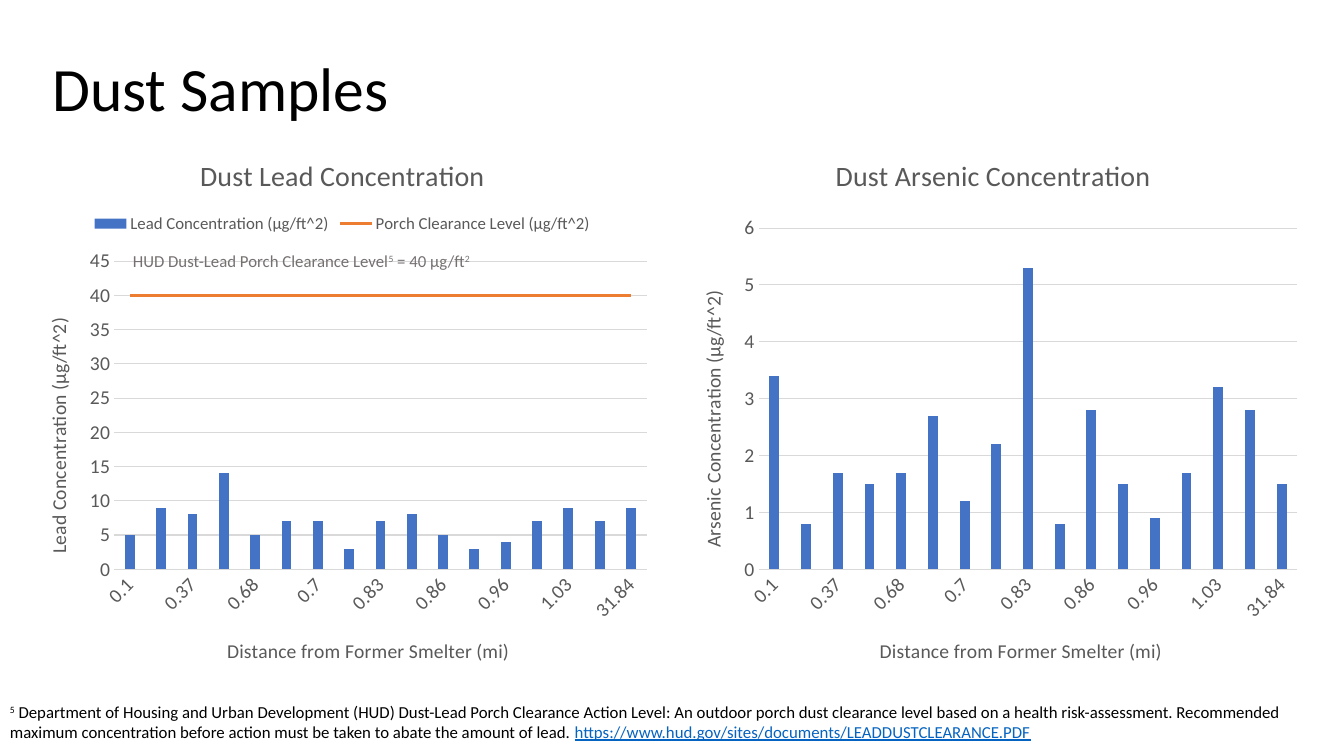
from lxml import etree
from pptx import Presentation
from pptx.chart.data import CategoryChartData
from pptx.dml.color import RGBColor
from pptx.enum.chart import XL_CHART_TYPE as ChartType, XL_LEGEND_POSITION as LegendPosition
from pptx.enum.chart import XL_MARKER_STYLE as MarkerStyle, XL_TICK_MARK as TickMark
from pptx.enum.text import MSO_ANCHOR as Anchor
from pptx.oxml import parse_xml
from pptx.oxml.ns import nsdecls, qn
from pptx.util import Cm, Pt

# Content
TITLE = "Dust Samples"
DISTANCES = ["0.1", "0.31", "0.37", "0.59", "0.68", "0.69", "0.7", "0.79", "0.83",
             "0.84", "0.86", "0.9", "0.96", "1.03", "1.03", "1.06", "31.84"]
DISTANCE_TITLE = "Distance from Former Smelter (mi)"
CHARTS = [
    dict(title="Dust Lead Concentration", value_title="Lead Concentration (µg/ft^2)",
         bars=("Lead Concentration (µg/ft^2)",
               [5, 9, 8, 14, 5, 7, 7, 3, 7, 8, 5, 3, 4, 7, 9, 7, 9]),
         limit=("Porch Clearance Level (µg/ft^2)", 40),
         top=45, step=5, plot=(0.14, 0.23, 0.84, 0.56)),
    dict(title="Dust Arsenic Concentration", value_title="Arsenic Concentration (µg/ft^2)",
         bars=("Series 1", [3.4, 0.8, 1.7, 1.5, 1.7, 2.7, 1.2, 2.2, 5.3,
                            0.8, 2.8, 1.5, 0.9, 1.7, 3.2, 2.8, 1.5]),
         limit=None, top=6, step=1, plot=(0.13, 0.17, 0.85, 0.62)),
]
CLEARANCE_NOTE = [("HUD Dust-Lead Porch Clearance Level", {}), ("5", dict(raised=True)),
                  (" = 40 µg/ft", {}), ("2", dict(raised=True))]
FOOTNOTE = [
    ("5", dict(raised=True)),
    (" Department of Housing and Urban Development (HUD) Dust-Lead Porch Clearance Action "
     "Level: An outdoor porch dust clearance level based on a health risk-assessment. "
     "Recommended maximum concentration before action must be taken to abate the amount "
     "of lead. ", {}),
    ("https://www.hud.gov/sites/documents/LEADDUSTCLEARANCE.PDF",
     dict(color="link", underline=True)),
]

THEME = dict(
    font="Calibri",
    color={name: RGBColor.from_string(code) for name, code in dict(
        text="000000", note="767171", chart="595959", grid="D9D9D9",
        bars="4472C4", limit="ED7D31", link="0563C1").items()},
    size=dict(title=Pt(44), chart=Pt(20), axis=Pt(14), small=Pt(12)),
)

# Layout
CHART_LEFT, CHART_TOP = 0.64, 3.39
CHART_WIDTH, CHART_HEIGHT, CHART_PITCH = 15.98, 13.87, 16.4


def style_font(font, size, color):
    font.name, font.size, font.bold = THEME["font"], THEME["size"][size], False
    font.color.rgb = THEME["color"][color]


def add_span(para, text, size="small", color="text", raised=False, underline=False):
    span = para.add_run()
    span.text = text
    style_font(span.font, size, color)
    if underline:
        span.font.underline = True
    if raised:
        span.font._element.set("baseline", "30000")


def add_text(page, area, spans, anchor=Anchor.TOP, line_spacing=None, **base):
    box = page.shapes.add_textbox(*map(Cm, area))
    frame = box.text_frame
    frame.word_wrap, frame.vertical_anchor = True, anchor
    para = frame.paragraphs[0]
    para.line_spacing = line_spacing
    for text, extra in spans:
        add_span(para, text, **{**base, **extra})


def set_title(owner, text, size):
    owner.has_title = True
    title = owner.chart_title if hasattr(owner, "chart_title") else owner.axis_title
    add_span(title.text_frame.paragraphs[0], text, size=size, color="chart")


def set_line(line, color, width):
    line.color.rgb, line.width = THEME["color"][color], Pt(width)


def place_plot(chart, fractions):
    area = chart.element.find(".//" + qn("c:plotArea"))
    for old in area.findall(qn("c:layout")):
        area.remove(old)
    parts = "".join(f'<c:{name} val="{value}"/>' for name, value in zip("xywh", fractions))
    area.insert(0, parse_xml(
        f'<c:layout {nsdecls("c")}><c:manualLayout><c:layoutTarget val="inner"/>'
        f'<c:xMode val="edge"/><c:yMode val="edge"/>{parts}</c:manualLayout></c:layout>'))


def turn_last_series_into_line(chart):
    bars = chart.element.find(".//" + qn("c:barChart"))
    series = bars.findall(qn("c:ser"))[-1]
    for flag in series.findall(qn("c:invertIfNegative")):
        series.remove(flag)
    axes = "".join(f'<c:axId val="{axis.get("val")}"/>' for axis in bars.findall(qn("c:axId")))
    lines = parse_xml(
        f'<c:lineChart {nsdecls("c")}><c:grouping val="standard"/><c:varyColors val="0"/>'
        f'<c:marker val="1"/>{axes}</c:lineChart>')
    lines.insert(2, series)
    bars.addnext(lines)
    limit = chart.plots[1].series[0]
    limit.smooth, limit.marker.style = False, MarkerStyle.NONE
    set_line(limit.format.line, "limit", 2.25)


def style_axes(chart, item):
    distance, value = chart.category_axis, chart.value_axis
    for axis, text in ((distance, DISTANCE_TITLE), (value, item["value_title"])):
        set_title(axis, text, "axis")
        style_font(axis.tick_labels.font, "axis", "chart")
        axis.major_tick_mark = axis.minor_tick_mark = TickMark.NONE
    set_line(distance.format.line, "grid", 0.75)
    value.format.line.fill.background()
    value.minimum_scale, value.maximum_scale, value.major_unit = 0, item["top"], item["step"]
    set_line(value.major_gridlines.format.line, "grid", 0.75)
    # Slanted distance labels, every second one shown; upright value title
    for query, angle in ((".//c:catAx/c:txPr/a:bodyPr", -45), (".//c:valAx/c:title//a:bodyPr", -90)):
        for body in chart.element.xpath(query):
            body.set("rot", str(angle * 60000))
            body.set("vert", "horz")
    for flag in chart.element.xpath(".//c:catAx/c:noMultiLvlLbl"):
        skip = etree.Element(qn("c:tickLblSkip"), val="2")
        flag.addprevious(skip)


def add_dust_chart(page, left, item):
    data = CategoryChartData()
    data.categories = DISTANCES
    data.add_series(*item["bars"])
    if item["limit"]:
        name, level = item["limit"]
        data.add_series(name, [level] * len(DISTANCES))
    chart = page.shapes.add_chart(
        ChartType.COLUMN_CLUSTERED, Cm(left), Cm(CHART_TOP),
        Cm(CHART_WIDTH), Cm(CHART_HEIGHT), data).chart
    style_font(chart.font, "small", "chart")
    set_title(chart, item["title"], "chart")
    bars = chart.plots[0]
    bars.gap_width, bars.overlap, bars.vary_by_categories = 219, -27, False
    fill = bars.series[0].format.fill
    fill.solid()
    fill.fore_color.rgb = THEME["color"]["bars"]
    style_axes(chart, item)
    place_plot(chart, item["plot"])
    chart.has_legend = bool(item["limit"])
    if item["limit"]:
        turn_last_series_into_line(chart)
        chart.legend.position = LegendPosition.TOP
        chart.legend.include_in_layout = False
        style_font(chart.legend.font, "small", "chart")


def main():
    deck = Presentation()
    deck.slide_width, deck.slide_height = Cm(33.87), Cm(19.05)
    page = deck.slides.add_slide(deck.slide_layouts[6])

    # Charts side by side
    for index, item in enumerate(CHARTS):
        add_dust_chart(page, CHART_LEFT + index * CHART_PITCH, item)

    # Heading, clearance note and footnote
    add_text(page, (1.07, 0.46, 33.22, 3.68), [(TITLE, {})],
             anchor=Anchor.MIDDLE, line_spacing=0.9, size="title")
    add_text(page, (3.1, 6.2, 9.73, 0.69), CLEARANCE_NOTE, color="note")
    add_text(page, (0, 17.55, 33.87, 1.27), FOOTNOTE)

    deck.save("out.pptx")


if __name__ == "__main__":
    main()
